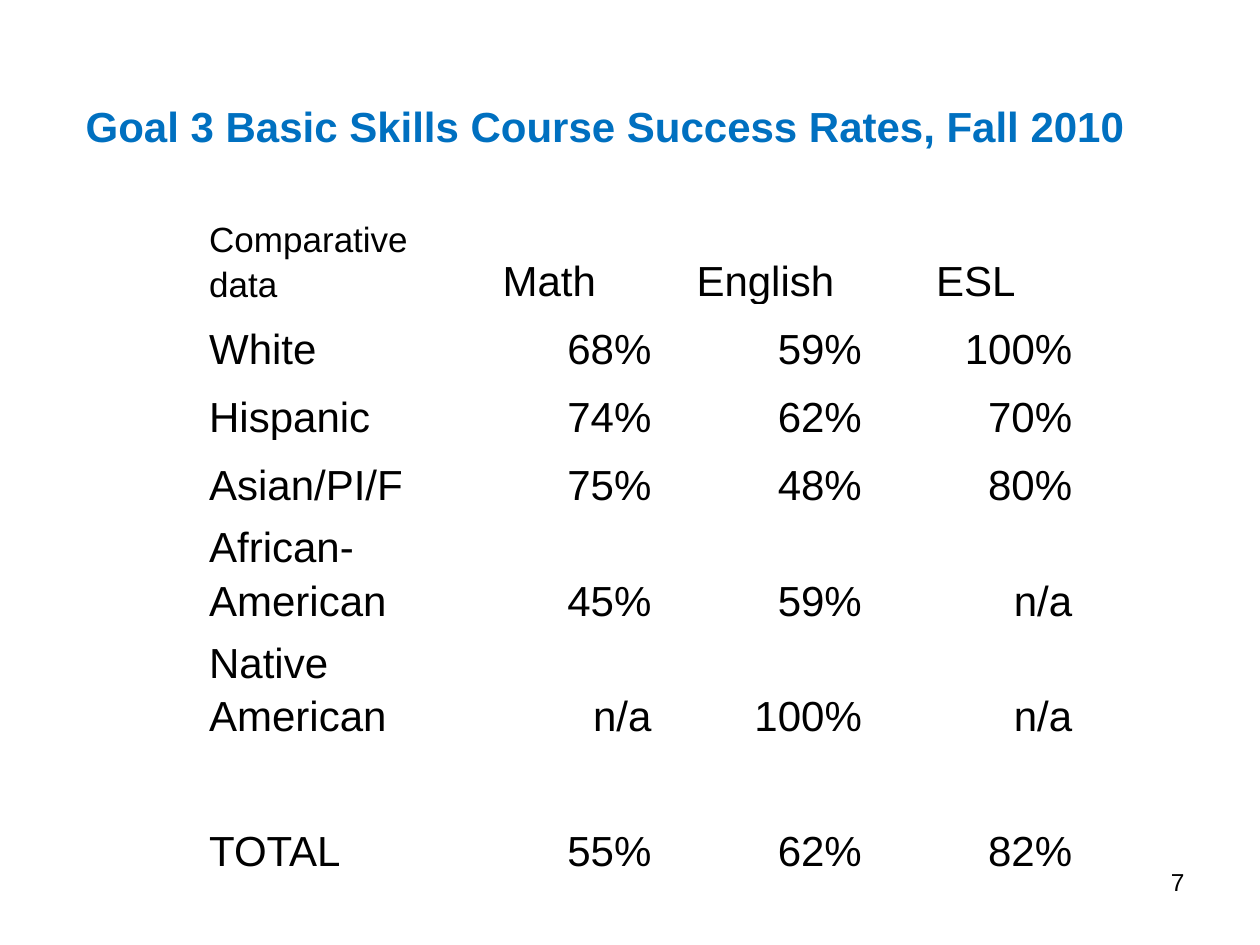
from pptx import Presentation
from pptx.dml.color import RGBColor
from pptx.enum.text import MSO_ANCHOR as Anchor, MSO_AUTO_SIZE as AutoSize, PP_ALIGN as Align
from pptx.util import Inches, Pt

COL_WIDTHS = [1.98, 1.67, 1.67, 1.67]
ROW_HEIGHTS = [0.75] + [0.54] * 3 + [0.92] * 2 + [1.07]
SUCCESS_RATES = [
    ["Comparative data", "Math ", "English", "ESL"],
    ["White", "68%", "59%", "100%"],
    ["Hispanic", "74%", "62%", "70%"],
    ["Asian/PI/F", "75%", "48%", "80%"],
    ["African-American", "45%", "59%", "n/a"],
    ["Native American", "n/a", "100%", "n/a"],
    ["TOTAL", "55%", "62%", "82%"],
]


def rgb(value):
    return RGBColor.from_string(value)


def write(tf, text, size=24, color="000000", bold=False, align=Align.LEFT, spacing=1.0):
    p = tf.paragraphs[0]
    p.alignment = align
    p.line_spacing = spacing
    r = p.add_run()
    r.text = text
    r.font.name = "Arial"
    r.font.size = Pt(size)
    r.font.bold = bold
    r.font.color.rgb = rgb(color)


def add_title(s, text):
    sp = s.shapes.title
    sp.left, sp.top, sp.width, sp.height = map(Inches, (0.58, 0.75, 8.83, 0.5))
    tf = sp.text_frame
    tf.auto_size = AutoSize.NONE
    tf.vertical_anchor = Anchor.TOP
    write(tf, text, color="0070C0", bold=True)


def fill_cell(cell, text, row, col):
    cell.fill.background()
    cell.vertical_anchor = Anchor.BOTTOM
    cell.margin_left = cell.margin_right = Inches(0.07)
    cell.margin_top = cell.margin_bottom = 0
    align = Align.LEFT if col == 0 else Align.CENTER if row == 0 else Align.RIGHT
    size = 20 if row == col == 0 else 24
    write(cell.text_frame, text, size=size, align=align, spacing=1.15)


def add_rates_table(s, rows):
    frame = s.shapes.add_table(len(rows), len(rows[0]), Inches(1.59), Inches(1.67),
                               Inches(sum(COL_WIDTHS)), Inches(sum(ROW_HEIGHTS)))
    table = frame.table
    table.first_row = table.horz_banding = False
    for column, width in zip(table.columns, COL_WIDTHS):
        column.width = Inches(width)
    for i, (values, height) in enumerate(zip(rows, ROW_HEIGHTS)):
        table.rows[i].height = Inches(height)
        for j, text in enumerate(values):
            fill_cell(table.cell(i, j), text, i, j)


def add_page_number(s, text):
    sp = s.shapes.add_textbox(Inches(7.17), Inches(6.83), Inches(2.33), Inches(0.52))
    tf = sp.text_frame
    tf.word_wrap = True
    write(tf, text, size=14, align=Align.RIGHT)


def main():
    prs = Presentation()
    prs.slide_width, prs.slide_height = Inches(10), Inches(7.5)
    s = prs.slides.add_slide(prs.slide_layouts[5])
    add_title(s, "Goal 3 Basic Skills Course Success Rates, Fall 2010")
    add_rates_table(s, SUCCESS_RATES)
    add_page_number(s, "7")
    prs.save("out.pptx")


if __name__ == "__main__":
    main()
